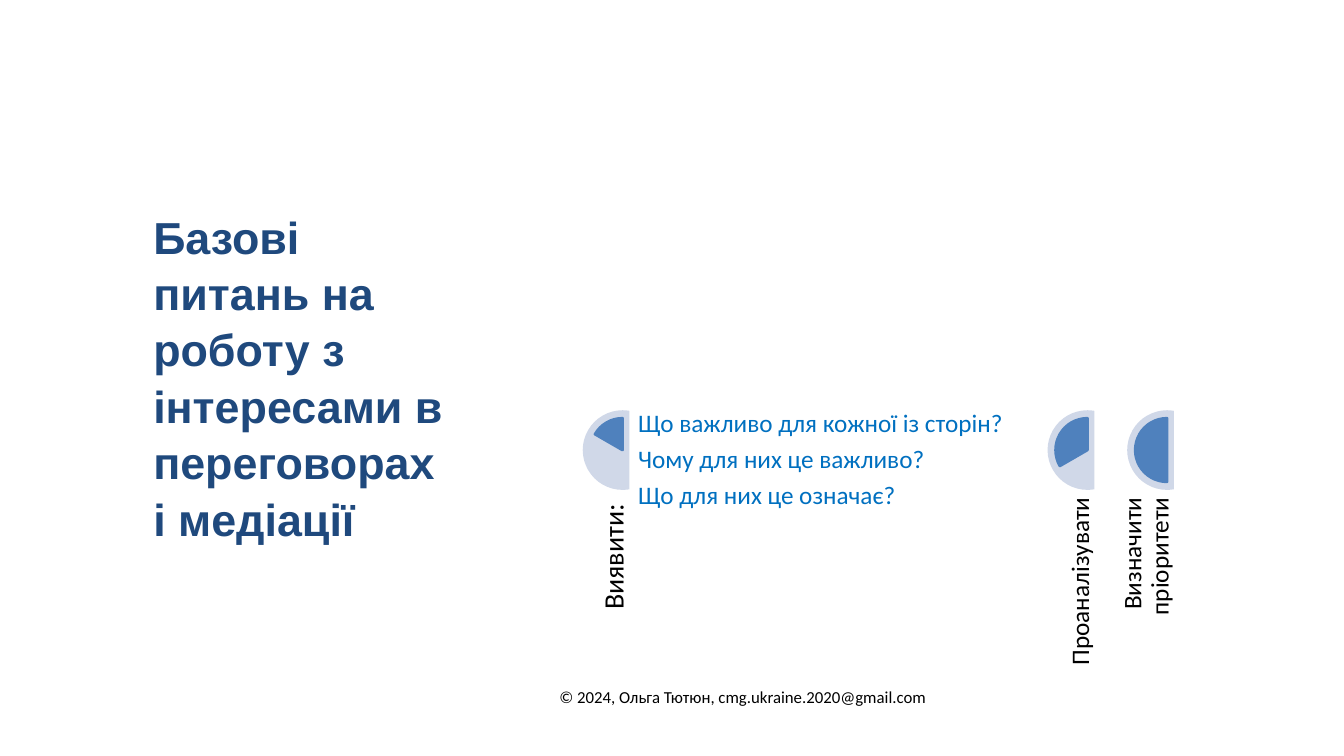
import dataclasses

import pptx
import pptx.dml.color
import pptx.enum.shapes
import pptx.enum.text
import pptx.oxml.ns
import pptx.shapes.autoshape
import pptx.shapes.base
import pptx.slide
import pptx.util
from lxml import etree

Inches = pptx.util.Inches
Pt = pptx.util.Pt
Align = pptx.enum.text.PP_ALIGN
Anchor = pptx.enum.text.MSO_ANCHOR
Preset = pptx.enum.shapes.MSO_SHAPE

COLORS = {
    "heading": "1F497D",
    "dial": "D0D8E8",
    "sector": "4F81BD",
    "question": "0070C0",
    "text": "000000",
}

DIAL_TOP, DIAL_SIZE = 4.07, 0.79
SECTOR_INSET, SECTOR_SIZE = 0.08, 0.63
LABEL_TOP, LABEL_LENGTH, LABEL_DEPTH = 5.84, 2.28, 0.47
LABEL_SHIFT = 0.91
# Angles are in units of 100000/60000 degrees
HALF_DISC = (48, 168)
SECTOR_END, SECTOR_STEP = 162, 36


@dataclasses.dataclass(frozen=True)
class Stage:
    label: str
    left: float
    size: int


STAGES = [
    Stage("Виявити: ", 5.78, 20),
    Stage("Проаналізувати", 10.39, 18),
    Stage("Визначити пріоритети", 11.18, 18),
]

QUESTIONS = [
    "Що важливо для кожної із сторін?",
    "Чому для них це важливо?",
    "Що для них це означає?",
]


def rgb(name: str) -> pptx.dml.color.RGBColor:
    return pptx.dml.color.RGBColor.from_string(COLORS[name])


def place(shape: pptx.shapes.base.BaseShape, left: float, top: float,
          width: float, height: float) -> None:
    shape.left, shape.top = Inches(left), Inches(top)
    shape.width, shape.height = Inches(width), Inches(height)


def write(shape: pptx.shapes.base.BaseShape, lines: list[str], *, size: float,
          color: str, font: str = "Calibri", bold: bool = False,
          align: Align = Align.LEFT, anchor: Anchor = Anchor.TOP,
          spacing: float = 1.0, after: float = 0, inset: bool = True) -> None:
    """Fill a shape with unbulleted paragraphs that share one format."""
    frame = shape.text_frame
    frame.word_wrap = True
    frame.auto_size = pptx.enum.text.MSO_AUTO_SIZE.NONE
    frame.vertical_anchor = anchor
    if not inset:
        frame.margin_left = frame.margin_right = 0
        frame.margin_top = frame.margin_bottom = 0
    frame.text = "\n".join(lines)
    for paragraph in frame.paragraphs:
        properties = paragraph._p.get_or_add_pPr()
        properties.set("marL", "0")
        properties.set("indent", "0")
        etree.SubElement(properties, pptx.oxml.ns.qn("a:buNone"))
        paragraph.alignment = align
        paragraph.line_spacing = spacing
        paragraph.space_before = Pt(0)
        paragraph.space_after = Pt(after)
        for run in paragraph.runs:
            run.font.name = font
            run.font.size = Pt(size)
            run.font.bold = bold
            run.font.color.rgb = rgb(color)


def add_arc(slide: pptx.slide.Slide, preset: Preset, left: float, top: float,
            size: float, angles: tuple[float, float],
            color: str) -> pptx.shapes.autoshape.Shape:
    arc = slide.shapes.add_shape(
        preset, Inches(left), Inches(top), Inches(size), Inches(size))
    arc.shadow.inherit = False
    arc.adjustments[0], arc.adjustments[1] = angles
    arc.fill.solid()
    arc.fill.fore_color.rgb = rgb(color)
    arc.line.fill.background()
    return arc


def add_stage(slide: pptx.slide.Slide, stage: Stage, step: int) -> None:
    """Draw a half dial, its growing sector and the upright label below."""
    add_arc(slide, Preset.CHORD, stage.left, DIAL_TOP, DIAL_SIZE,
            HALF_DISC, "dial")
    sector = add_arc(
        slide, Preset.PIE, stage.left + SECTOR_INSET, DIAL_TOP + SECTOR_INSET,
        SECTOR_SIZE, (SECTOR_END - SECTOR_STEP * step, SECTOR_END), "sector")
    sector.line.color.rgb = rgb("sector")
    sector.line.width = Pt(2)

    label = slide.shapes.add_textbox(
        Inches(stage.left - LABEL_SHIFT), Inches(LABEL_TOP),
        Inches(LABEL_LENGTH), Inches(LABEL_DEPTH))
    label.rotation = 270
    write(label, [stage.label], size=stage.size, color="text",
          align=Align.RIGHT, anchor=Anchor.BOTTOM, spacing=0.9, inset=False)


def main() -> None:
    presentation = pptx.Presentation()
    presentation.slide_width = Inches(13.33)
    presentation.slide_height = Inches(7.5)
    slide = presentation.slides.add_slide(presentation.slide_layouts[1])

    heading = slide.shapes.title
    place(heading, 1.42, 2, 3.16, 4.03)
    write(heading,
          ["Базові питань на роботу з інтересами в переговорах і медіації"],
          size=32, color="heading", font="Arial", bold=True, spacing=1.05)

    questions = slide.placeholders[1]
    place(questions, 6.33, DIAL_TOP, 3.69, 3.15)
    write(questions, QUESTIONS, size=18, color="question",
          spacing=0.9, after=6.3, inset=False)

    for step, stage in enumerate(STAGES, start=1):
        add_stage(slide, stage, step)

    copyright_line = slide.shapes.add_textbox(
        Inches(5.45), Inches(6.76), Inches(4.96), Inches(0.42))
    write(copyright_line, ["© 2024, Ольга Тютюн, cmg.ukraine.2020@gmail.com"],
          size=12, color="text")

    presentation.save("out.pptx")


if __name__ == "__main__":
    main()
